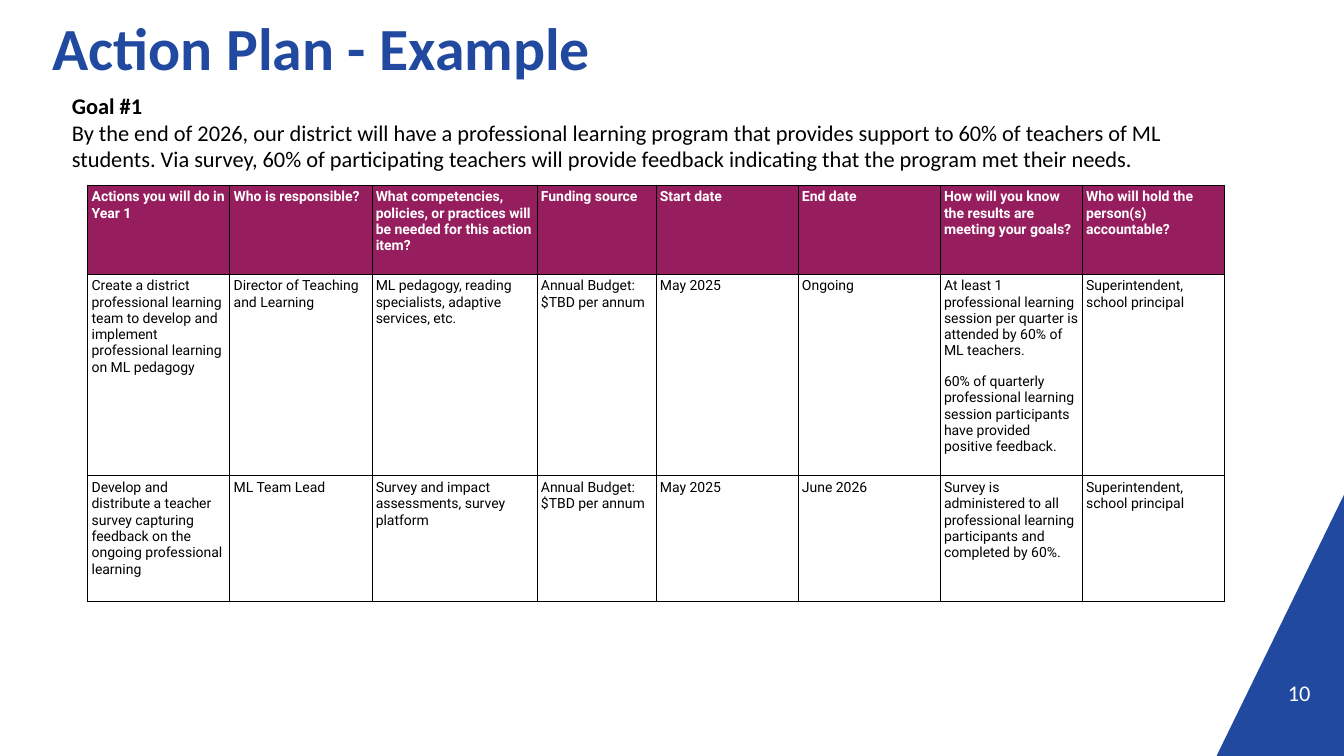
from lxml.etree import SubElement
from pptx import Presentation
from pptx.dml.color import RGBColor
from pptx.enum.text import MSO_ANCHOR, PP_ALIGN
from pptx.oxml.ns import qn
from pptx.util import Pt

WIDE, HIGH = 960, 540
BLUE, WINE, WHITE, BLACK = "20499F", "971E5E", "FFFFFF", "000000"

TITLE = "Action Plan - Example"
GOAL = "Goal #1"
AIM = (
    "By the end of 2026, our district will have a professional learning program "
    "that provides support to 60% of teachers of ML students. Via survey, 60% of "
    "participating teachers will provide feedback indicating that the program met "
    "their needs."
)
PAGE = "10"

HEADS = [
    "Actions you will do in Year 1",
    "Who is responsible?",
    "What competencies, policies, or practices will be needed for this action item?",
    "Funding source",
    "Start date",
    "End date",
    "How will you know the results are meeting your goals?",
    "Who will hold the person(s) accountable?",
]
BUDGET = "Annual Budget: $TBD per annum"
START = "May 2025"
HOLDER = "Superintendent, school principal"
ACTIONS = [
    [
        "Create a district professional learning team to develop and implement "
        "professional learning on ML pedagogy",
        "Director of Teaching and Learning",
        "ML pedagogy, reading specialists, adaptive services, etc.",
        BUDGET,
        START,
        "Ongoing",
        "At least 1 professional learning session per quarter is attended by 60% of "
        "ML teachers.\n60% of quarterly professional learning session participants "
        "have provided positive feedback.",
        HOLDER,
    ],
    [
        "Develop and distribute a teacher survey capturing feedback on the ongoing "
        "professional learning",
        "ML Team Lead",
        "Survey and impact assessments, survey platform",
        BUDGET,
        START,
        "June 2026",
        "Survey is administered to all professional learning participants and "
        "completed by 60%.",
        HOLDER,
    ],
]
COLS = [101.5, 101.5, 118, 85, 101.5, 101.5, 101.5, 101.5]
ROWS = [63.5, 144.25, 90]


def paint(target, tone):
    """Give a fill or a font a hex colour."""
    if hasattr(target, "solid"):
        target.solid()
        target.fore_color.rgb = RGBColor.from_string(tone)
    else:
        target.color.rgb = RGBColor.from_string(tone)


def style(para, size, tone, bold=False, face="Calibri"):
    font = para.font
    font.name, font.size, font.bold = face, Pt(size), bold
    paint(font, tone)


def inset(holder, side, top):
    """Set the margins of a text frame or a cell."""
    holder.margin_left = holder.margin_right = Pt(side)
    holder.margin_top = holder.margin_bottom = Pt(top)


def add_text(slide, area, lines, anchor, side=0, top=0):
    """Add a box; lines hold text, size, colour and bold."""
    frame = slide.shapes.add_textbox(*map(Pt, area)).text_frame
    frame.word_wrap = True
    frame.vertical_anchor = anchor
    inset(frame, side, top)
    frame.text = "\n".join(line[0] for line in lines)
    for para, line in zip(frame.paragraphs, lines):
        style(para, *line[1:])
    return frame


def add_edges(cell):
    """Draw a thin black line on all four sides of a cell."""
    props = cell._tc.get_or_add_tcPr()
    for side in ("lnL", "lnR", "lnT", "lnB"):
        line = SubElement(props, qn("a:" + side), w=str(Pt(0.75)))
        SubElement(SubElement(line, qn("a:solidFill")), qn("a:srgbClr"), val=BLACK)


def fill_cell(cell, text, head):
    cell.text = text
    inset(cell, 2.7, 2.7)
    add_edges(cell)
    if head:
        paint(cell.fill, WINE)
    else:
        cell.fill.background()
    for para in cell.text_frame.paragraphs:
        para.space_after = Pt(10.1)
        style(para, 10, WHITE if head else BLACK, head, "Roboto")


def add_plan(slide):
    area = (62.75, 132.25, sum(COLS), sum(ROWS))
    table = slide.shapes.add_table(len(ROWS), len(COLS), *map(Pt, area)).table
    table.horz_banding = False
    for col, width in zip(table.columns, COLS):
        col.width = Pt(width)
    for num, (row, height) in enumerate(zip(table.rows, ROWS)):
        row.height = Pt(height)
        for cell, text in zip(row.cells, [HEADS, *ACTIONS][num]):
            fill_cell(cell, text, num == 0)


def add_corner(slide):
    path = slide.shapes.build_freeform(Pt(WIDE), Pt(353.5))
    path.add_line_segments([(Pt(869), Pt(HIGH)), (Pt(WIDE), Pt(HIGH))])
    corner = path.convert_to_shape()
    corner.shadow.inherit = False
    paint(corner.fill, BLUE)
    corner.line.fill.background()


def main():
    deck = Presentation()
    deck.slide_width, deck.slide_height = Pt(WIDE), Pt(HIGH)
    slide = deck.slides.add_slide(deck.slide_layouts[6])
    add_corner(slide)

    title = add_text(slide, (37.5, 17, 862.5, 39), [(TITLE, 42.7, BLUE, True)],
                     MSO_ANCHOR.MIDDLE)
    title.paragraphs[0].line_spacing = 0.9
    page = add_text(slide, (865, 482.5, 71, 21.5), [(PAGE, 16, WHITE)],
                    MSO_ANCHOR.BOTTOM)
    page.paragraphs[0].alignment = PP_ALIGN.RIGHT
    add_text(slide, (41.75, 60.5, 855.5, 67.75),
             [(GOAL, 16, BLACK, True), (AIM, 16, BLACK)],
             MSO_ANCHOR.MIDDLE, 9.6, 4.8)
    add_plan(slide)
    deck.save("out.pptx")


if __name__ == "__main__":
    main()
